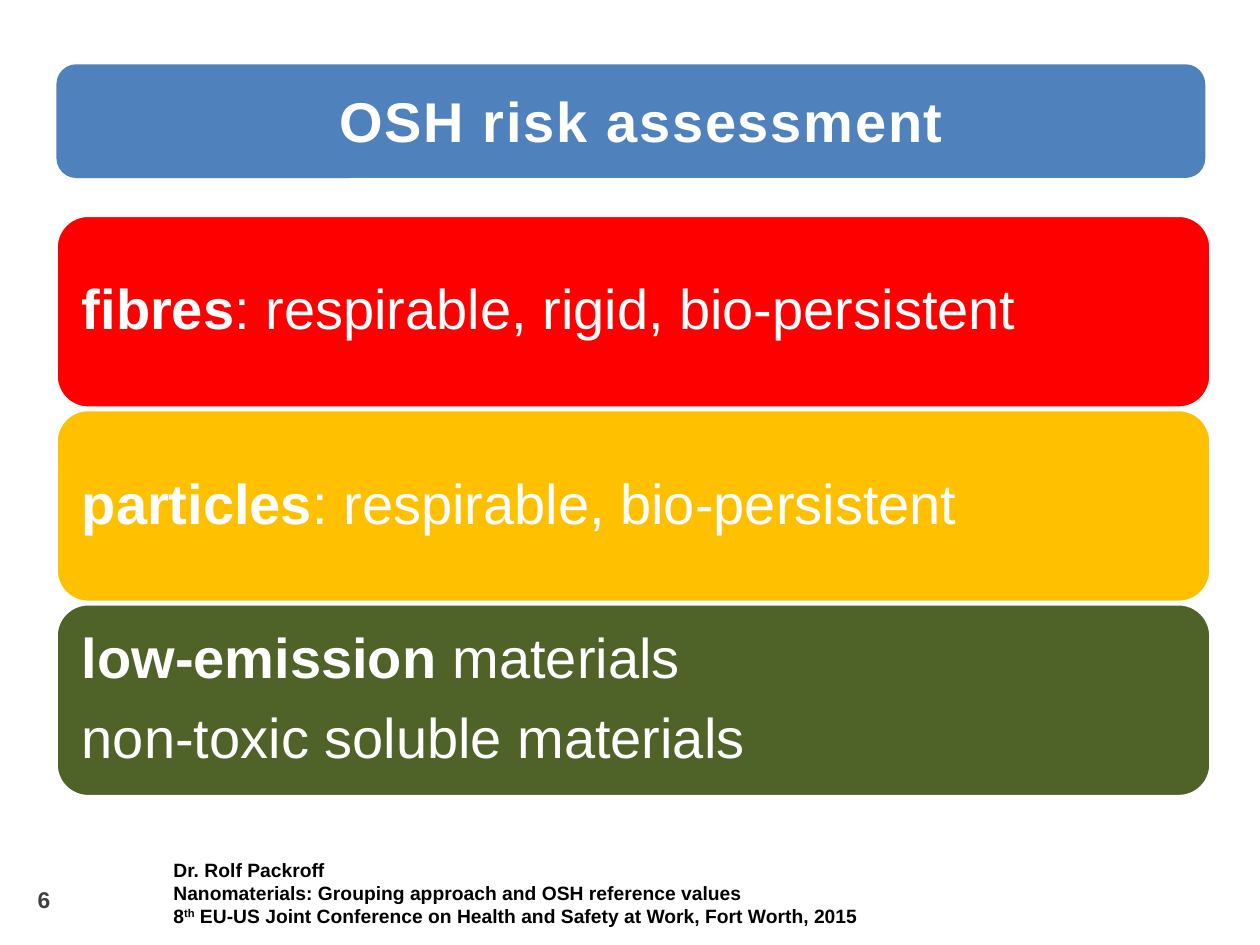
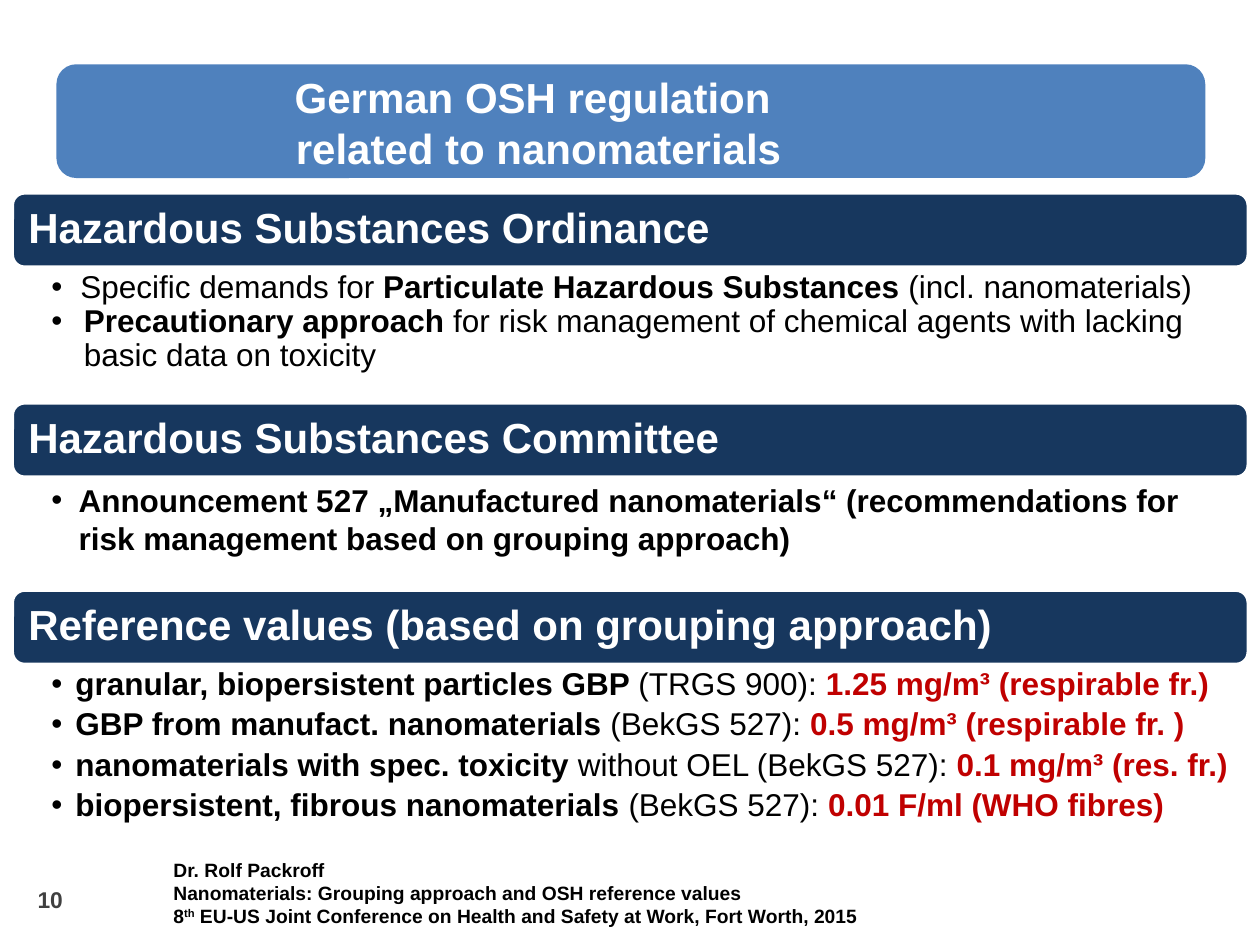
from lxml import etree
from pptx import Presentation
from pptx import util as u
from pptx.dml.color import RGBColor
from pptx.enum import shapes, text
from pptx.oxml.ns import qn

Pt = u.Pt
FONT = "Arial"
COLOURS = {
    "band": "4F81BD", "bar": "17375E", "white": "FFFFFF", "black": "000000",
    "number": "404040", "value": "C00000",
    "fibres": "FF0000", "particles": "FFC000", "low": "4F6228",
}
LEFT, CENTER = text.PP_ALIGN.LEFT, text.PP_ALIGN.CENTER
TOP, MIDDLE = text.MSO_ANCHOR.TOP, text.MSO_ANCHOR.MIDDLE


def rgb(name):
    return RGBColor.from_string(COLOURS[name])


def place(shape, box):
    shape.left, shape.top, shape.width, shape.height = (Pt(v) for v in box)


def prepare_frame(shape, insets=(7.2, 3.6, 7.2, 3.6), anchor=TOP, wrap=True):
    frame = shape.text_frame
    frame.auto_size = text.MSO_AUTO_SIZE.NONE
    frame.word_wrap = wrap
    frame.vertical_anchor = anchor
    (frame.margin_left, frame.margin_top,
     frame.margin_right, frame.margin_bottom) = (Pt(v) for v in insets)
    return frame


def write(frame, paragraphs, size, colour, bold=True, align=LEFT,
          spacing=1.0, after=0, hangs=None):
    """Each paragraph is a list of (words, style); style holds bold, colour or baseline."""
    for index, runs in enumerate(paragraphs):
        paragraph = frame.paragraphs[0] if index == 0 else frame.add_paragraph()
        if hangs:
            add_bullet(paragraph, hangs[index])
        paragraph.alignment = align
        paragraph.line_spacing = spacing
        paragraph.space_before = Pt(0)
        paragraph.space_after = Pt(after)
        font = paragraph.font
        font.name, font.size, font.bold = FONT, Pt(size), bold
        font.color.rgb = rgb(colour)
        for words, style in runs:
            for number, line in enumerate(words.split("\n")):
                if number:
                    paragraph.add_line_break()
                run = paragraph.add_run()
                run.text = line
                if "bold" in style:
                    run.font.bold = style["bold"]
                if "colour" in style:
                    run.font.color.rgb = rgb(style["colour"])
                if "baseline" in style:
                    run.font._element.set("baseline", style["baseline"])


def add_bullet(paragraph, hang):
    properties = paragraph._p.get_or_add_pPr()
    properties.set("marL", str(Pt(hang)))
    properties.set("indent", str(-Pt(hang)))
    etree.SubElement(properties, qn("a:buFont")).set("typeface", FONT)
    etree.SubElement(properties, qn("a:buChar")).set("char", "•")


def add_panel(slide, box, fill, line, width):
    panel = slide.shapes.add_shape(shapes.MSO_SHAPE.ROUNDED_RECTANGLE,
                                   *(Pt(v) for v in box))
    panel.shadow.inherit = False
    panel.fill.solid()
    panel.fill.fore_color.rgb = rgb(fill)
    panel.line.color.rgb = rgb(line)
    panel.line.width = Pt(width)
    return panel


PLAIN, BOLD = {"bold": False}, {"bold": True}
VALUE = {"bold": True, "colour": "value"}


# Parts shared by both slides
def add_frame(slide, number):
    band = add_panel(slide, (33, 37.5, 655, 63.5), "band", "band", 1.5)
    slide.shapes.element.insert(2, band.element)  # behind the title

    footer = slide.shapes.add_textbox(Pt(92), Pt(486.7), Pt(454), Pt(47.5))
    write(prepare_frame(footer), [
        [("Dr. Rolf Packroff\nNanomaterials: Grouping approach and OSH reference values", {})],
        [("8", {}), ("th", {"baseline": "30000"}),
         (" EU-US Joint Conference on Health and Safety at Work, Fort Worth, 2015", {})],
    ], 11, "black")

    page = slide.shapes.add_textbox(Pt(21.5), Pt(506.2), Pt(41), Pt(29))
    write(prepare_frame(page, (0, 0, 7.2, 0), wrap=False), [[(number, {})]], 13, "number")


def set_title(slide, box, lines, size):
    title = slide.shapes.title
    place(title, box)
    write(prepare_frame(title), [[(line, {})] for line in lines], size, "white", align=CENTER)
    return title


# Risk classes: equal cards stacked in a box
def add_risk_cards(slide, box, cards):
    left, top, width, height = box
    pitch = height / len(cards)
    for index, (fill, paragraphs) in enumerate(cards):
        card = add_panel(slide, (left, top + index * pitch, width, pitch - 0.75),
                         fill, "white", 2)
        write(prepare_frame(card, (9.4,) * 4, MIDDLE), paragraphs, 32, "white",
              bold=False, spacing=0.9, after=11.2)


# Regulation sections: heading bar with a bulleted list below
def add_sections(slide, box, sections, bar_height=42.5):
    left, top, width = box
    bodies = [shape for shape in slide.placeholders
              if shape.placeholder_format.idx in (1, 2, 3, 4)]
    for body, (heading, height, spacing, after, hangs, items) in zip(bodies, sections):
        bar = add_panel(slide, (left, top, width, bar_height), "bar", "white", 2)
        write(prepare_frame(bar, (7.2,) * 4, MIDDLE), [[(heading, {})]], 24, "white",
              spacing=0.9, after=8.4)
        place(body, (left, top + bar_height, width, height))
        write(prepare_frame(body, (22.4, 2.2, 10, 2.2)), items, 18, "black",
              bold=False, spacing=spacing, after=after, hangs=hangs)
        top += bar_height + height


def remove_empty_placeholders(slide):
    for shape in list(slide.placeholders):
        if not shape.text_frame.text:
            shape.element.getparent().remove(shape.element)


def build_risk_slide(presentation):
    slide = presentation.slides.add_slide(presentation.slide_layouts[5])
    add_frame(slide, "6")
    title = set_title(slide, (41.8, 46, 649.4, 40), ["OSH risk assessment"], 32)
    title.text_frame.paragraphs[0].runs[0].font._element.set("spc", "100")
    add_risk_cards(slide, (32, 123, 660, 333), [
        ("fibres", [[("fibres", BOLD), (": respirable, rigid, bio-persistent", {})]]),
        ("particles", [[("particles", BOLD), (": respirable, bio-persistent", {})]]),
        ("low", [[("low-emission ", BOLD), ("materials", {})],
                 [("non-toxic soluble materials", {})]]),
    ])
    remove_empty_placeholders(slide)


def build_regulation_slide(presentation):
    slide = presentation.slides.add_slide(presentation.slide_layouts[4])
    add_frame(slide, "10")
    set_title(slide, (65.5, 37.5, 484.5, 65.5),
              ["German OSH regulation ", "related to nanomaterials"], 24)
    limits = [
        ("granular, biopersistent particles GBP ", "(TRGS 900): ", "1.25 mg/m³ (respirable fr.)"),
        ("GBP from manufact. nanomaterials", " (BekGS 527): ", "0.5 mg/m³ (respirable fr. )"),
        ("nanomaterials with spec. toxicity ", "without OEL (BekGS 527): ",
         "0.1 mg/m³ (res. fr.)"),
        ("biopersistent, fibrous nanomaterials ", "(BekGS 527): ", "0.01 F/ml (WHO fibres)"),
    ]
    # heading, list height, line spacing, space after, hanging indents, items
    add_sections(slide, (7, 110.2, 706.3), [
        ("Hazardous Substances Ordinance", 77.5, 0.9, 0, (16.5, 18.5), [
            [("Specific demands for ", PLAIN), ("Particulate Hazardous Substances ", BOLD),
             ("(incl. nanomaterials)", PLAIN)],
            [("Precautionary approach ", BOLD),
             ("for risk management of chemical agents with lacking\n"
              "basic data on toxicity", PLAIN)],
        ]),
        ("Hazardous Substances Committee", 64.5, 1.0, 0, (15.5,), [
            [("Announcement 527 „Manufactured nanomaterials“ (recommendations for\n"
              "risk management based on grouping approach)", BOLD)],
        ]),
        ("Reference values (based on grouping approach)", 88, 0.9, 3.6, (13.7,) * 4, [
            list(zip(limit, (BOLD, PLAIN, VALUE))) for limit in limits
        ]),
    ])
    remove_empty_placeholders(slide)


def main():
    presentation = Presentation()
    presentation.slide_width, presentation.slide_height = Pt(720), Pt(540)
    build_risk_slide(presentation)
    build_regulation_slide(presentation)
    presentation.save("out.pptx")


if __name__ == "__main__":
    main()
